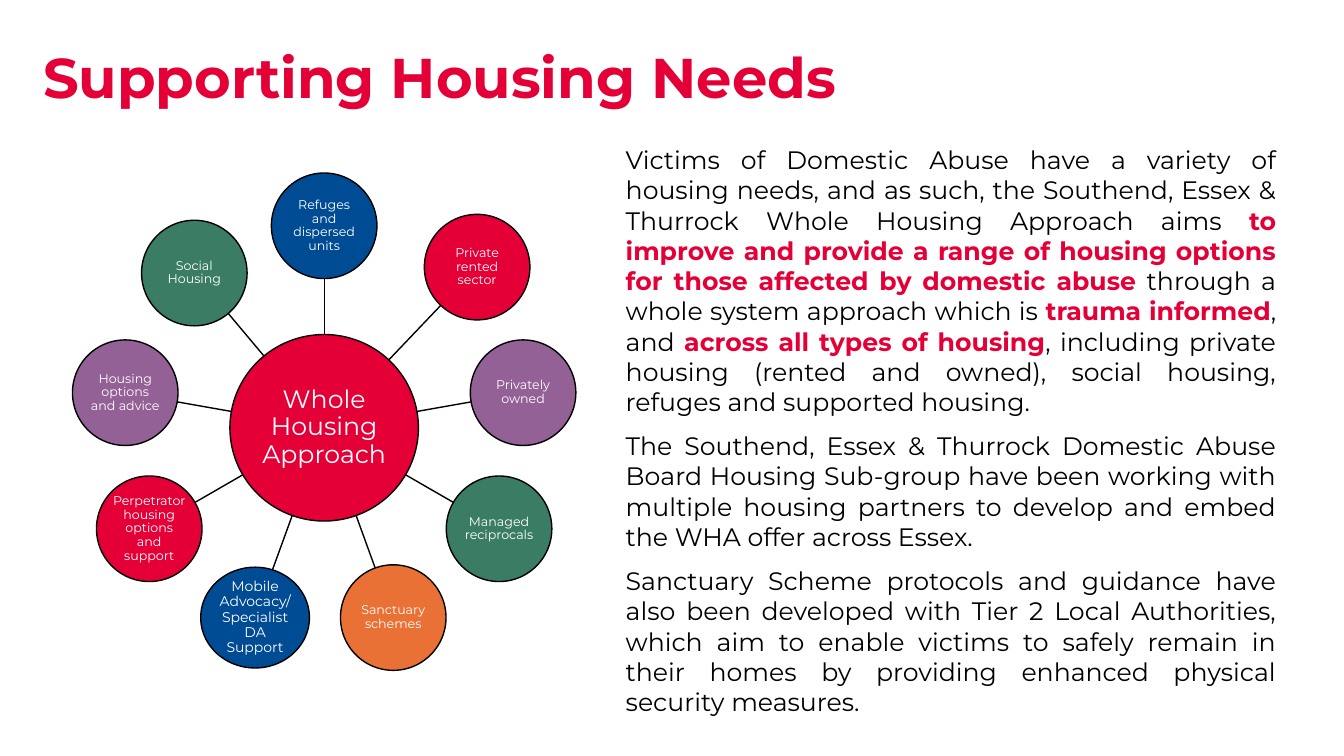
from math import cos, radians, sin

from lxml.etree import SubElement
from pptx import Presentation
from pptx.dml.color import RGBColor
from pptx.enum.shapes import MSO_CONNECTOR, MSO_SHAPE
from pptx.enum.text import MSO_ANCHOR, PP_ALIGN
from pptx.oxml.ns import qn
from pptx.util import Cm, Pt

COLOURS = {
    "red": "E40037",
    "blue": "004C94",
    "purple": "936195",
    "green": "3A7D64",
    "orange": "E97135",
    "black": "000000",
    "white": "FFFFFF",
}
FONT = "Montserrat"

TITLE = "Supporting Housing Needs"
HUB = "Whole Housing Approach"
ORBIT = 5.09
SMALL = (2.66, 2.66)

OPTIONS = [
    {"text": "Refuges and dispersed units", "colour": "blue"},
    {"text": "Private rented sector", "colour": "red", "bearing": 43.6, "orbit": 5.59},
    {"text": "Privately owned", "colour": "purple"},
    {"text": "Managed reciprocals", "colour": "green"},
    {"text": "Sanctuary schemes", "colour": "orange"},
    {"text": "Mobile Advocacy/Specialist DA Support", "colour": "blue",
     "size": (2.74, 2.54), "points": 10},
    {"text": "Perpetrator housing options and support", "colour": "red"},
    {"text": "Housing options and advice", "colour": "purple"},
    {"text": "Social Housing", "colour": "green"},
]

BODY = [
    [
        ("Victims of Domestic Abuse have a variety of housing needs, and as such, "
         "the Southend, Essex & Thurrock Whole Housing Approach aims ", False),
        ("to improve and provide a range of housing options for those affected "
         "by domestic abuse", True),
        (" through a whole system approach which is ", False),
        ("trauma informed", True),
        (", and ", False),
        ("across all types of housing", True),
        (", including private housing (rented and owned), social housing, refuges "
         "and supported housing.", False),
    ],
    [
        ("The Southend, Essex & Thurrock Domestic Abuse Board Housing Sub-group have "
         "been working with multiple housing partners to develop and embed the WHA "
         "offer across Essex.", False),
    ],
    [
        ("Sanctuary Scheme protocols and guidance have also been developed with Tier 2 "
         "Local Authorities, which aim to enable victims to safely remain in their "
         "homes by providing enhanced physical security measures.", False),
    ],
]

CENTRE_X, CENTRE_Y = 8.17, 10.78
HUB_SIZE = (4.75, 4.7)
HUB_RADIUS = 2.36


def rgb(name):
    return RGBColor.from_string(COLOURS[name])


def add_run(paragraph, text, points, colour, bold=False):
    run = paragraph.add_run()
    run.text = text
    run.font.name = FONT
    run.font.size = Pt(points)
    run.font.bold = bold
    run.font.color.rgb = rgb(colour)


def prepare_frame(shape, insets):
    frame = shape.text_frame
    frame.word_wrap = True
    frame.vertical_anchor = MSO_ANCHOR.MIDDLE
    frame.margin_left, frame.margin_top, frame.margin_right, frame.margin_bottom = map(Cm, insets)
    return frame


def on_orbit(bearing, distance):
    angle = radians(bearing)
    return CENTRE_X + distance * sin(angle), CENTRE_Y - distance * cos(angle)


def add_circle(shapes, centre, size, text, colour, points):
    left, top = (middle - length / 2 for middle, length in zip(centre, size))
    circle = shapes.add_shape(MSO_SHAPE.OVAL, Cm(left), Cm(top), *map(Cm, size))
    circle.shadow.inherit = False
    circle.fill.solid()
    circle.fill.fore_color.rgb = rgb(colour)
    circle.line.color.rgb = rgb("black")
    circle.line.width = Pt(1)
    paragraph = prepare_frame(circle, [0.02] * 4).paragraphs[0]
    paragraph.alignment = PP_ALIGN.CENTER
    paragraph.line_spacing = 0.9
    add_run(paragraph, text, points, "white")


def add_spoke(shapes, start, end):
    spoke = shapes.add_connector(MSO_CONNECTOR.STRAIGHT, *map(Cm, start + end))
    spoke.line.color.rgb = rgb("black")
    spoke.line.width = Pt(1)
    SubElement(spoke._element.spPr, qn("a:effectLst"))


def add_title(slide):
    title = slide.shapes.add_textbox(Cm(0.84), Cm(0.71), Cm(32.08), Cm(2.29))
    frame = prepare_frame(title, (0.25, 0.13, 0.25, 0))
    add_run(frame.paragraphs[0], TITLE, 40, "red", True)


def add_body(slide):
    body = slide.shapes.add_textbox(Cm(15.52), Cm(3.33), Cm(16.89), Cm(15.04))
    body.fill.solid()
    body.fill.fore_color.rgb = rgb("white")
    frame = prepare_frame(body, (0.25, 0.13, 0.25, 0.13))
    for index, runs in enumerate(BODY):
        paragraph = frame.add_paragraph() if index else frame.paragraphs[0]
        paragraph.alignment = PP_ALIGN.JUSTIFY
        paragraph.space_before = Pt(10 if index else 0)
        for text, strong in runs:
            add_run(paragraph, text, 18, "red" if strong else "black", strong)


def add_wheel(slide):
    shapes = slide.shapes.add_group_shape().shapes
    add_circle(shapes, (CENTRE_X, CENTRE_Y), HUB_SIZE, HUB, "red", 18)
    step = 360 / len(OPTIONS)
    for index, option in enumerate(OPTIONS):
        bearing = option.get("bearing", index * step)
        orbit = option.get("orbit", ORBIT)
        size = option.get("size", SMALL)
        add_spoke(shapes, on_orbit(bearing, HUB_RADIUS),
                  on_orbit(bearing, orbit - size[1] / 2))
        add_circle(shapes, on_orbit(bearing, orbit), size, option["text"],
                   option["colour"], option.get("points", 9))


def main():
    presentation = Presentation()
    presentation.slide_width = Cm(33.87)
    presentation.slide_height = Cm(19.05)
    slide = presentation.slides.add_slide(presentation.slide_layouts[6])
    add_title(slide)
    add_body(slide)
    add_wheel(slide)
    presentation.save("out.pptx")


if __name__ == "__main__":
    main()
